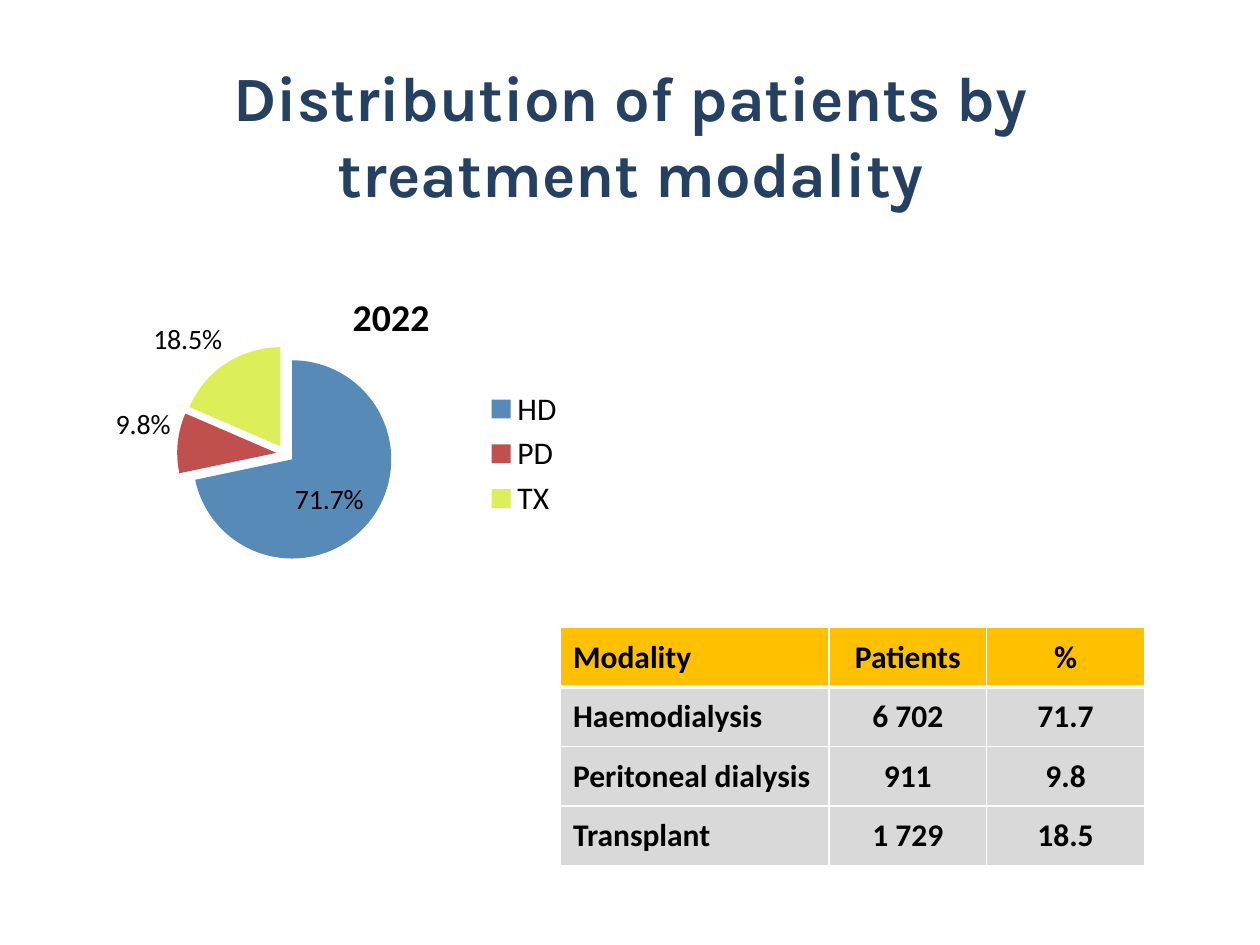
import pptx
import pptx.chart.data
import pptx.dml.color
import pptx.enum.chart
import pptx.enum.text
import pptx.oxml
import pptx.oxml.ns
import pptx.util
from pptx.util import Cm, Pt

COLOURS = {
    "heading": "254061",
    "text": "000000",
    "header": "FFC000",
    "body": "D9D9D9",
    "border": "FFFFFF",
    "HD": "578AB7",
    "PD": "C0504D",
    "TX": "DCEF59",
}
FORMATS = {
    "heading": {"name": "Karla", "size": Pt(36), "bold": True},
    "chart": {"name": "Calibri", "size": Pt(18), "bold": False},
    "chart title": {"name": "Calibri", "size": Pt(21.6), "bold": True},
    "label": {"name": "Calibri", "size": Pt(16), "bold": False},
    "cell": {"name": "Calibri", "size": Pt(18), "bold": True},
}
SHARES = {"HD": 71.7, "PD": 9.8, "TX": 18.5}
MODALITIES = [
    ("Modality", "Patients", "%"),
    ("Haemodialysis", "6 702", "71.7"),
    ("Peritoneal dialysis", "911", "9.8"),
    ("Transplant", "1 729", "18.5"),
]
COLUMN_WIDTHS = (5.41, 3.18, 3.18)
ROW_HEIGHT = 1.2
ALIGN = pptx.enum.text.PP_ALIGN
LABEL_AT = pptx.enum.chart.XL_LABEL_POSITION


def rgb(key):
    return pptx.dml.color.RGBColor.from_string(COLOURS[key])


def set_values(target, values):
    for name, value in values.items():
        setattr(target, name, value)


def style_font(font, kind, colour="text"):
    set_values(font, FORMATS[kind])
    font.color.rgb = rgb(colour)


def fill_solid(fill, colour):
    fill.solid()
    fill.fore_color.rgb = rgb(colour)


def write(frame, text, kind, colour="text", align=ALIGN.CENTER):
    paragraph = frame.paragraphs[0]
    paragraph.alignment = align
    words = paragraph.add_run()
    words.text = text
    style_font(words.font, kind, colour)


def add_heading(slide, text):
    heading = slide.shapes.add_textbox(Cm(2.69), Cm(1.12), Cm(20.04), Cm(3.18))
    set_values(heading.text_frame, {
        "word_wrap": True,
        "vertical_anchor": pptx.enum.text.MSO_ANCHOR.MIDDLE,
    })
    write(heading.text_frame, text, "heading", "heading")


def place(element, inner=False, **fractions):
    target = '<c:layoutTarget val="inner"/>' if inner else ""
    modes = "".join(f'<c:{k}Mode val="edge"/>' for k in "xy")
    values = "".join(f'<c:{k} val="{v}"/>' for k, v in fractions.items())
    layout = pptx.oxml.parse_xml(
        f'<c:layout {pptx.oxml.ns.nsdecls("c")}><c:manualLayout>'
        f'{target}{modes}{values}</c:manualLayout></c:layout>')
    for old in element.findall(pptx.oxml.ns.qn("c:layout")):
        element.remove(old)
    before = [element.find(pptx.oxml.ns.qn(f"c:{tag}")) for tag in ("tx", "legendPos")]
    position = max((element.index(e) + 1 for e in before if e is not None), default=0)
    element.insert(position, layout)


def add_share_pie(slide):
    shares = pptx.chart.data.CategoryChartData(number_format='0.0"%"')
    shares.categories = list(SHARES)
    shares.add_series("Series 1", list(SHARES.values()))
    chart = slide.shapes.add_chart(
        pptx.enum.chart.XL_CHART_TYPE.PIE,
        Cm(0.51), Cm(4.29), Cm(12.19), Cm(8.38), shares).chart
    style_font(chart.font, "chart")

    chart.has_title = True
    write(chart.chart_title.text_frame, "2022", "chart title")
    place(chart.chart_title._element, x=0.53, y=0.17)

    chart.has_legend = True
    set_values(chart.legend, {
        "position": pptx.enum.chart.XL_LEGEND_POSITION.RIGHT,
        "include_in_layout": False,
    })
    style_font(chart.legend.font, "chart")
    place(chart.legend._element, x=0.74, y=0.41, w=0.17, h=0.34)

    pie = chart.plots[0]
    pie.vary_by_categories = True
    place(chart._chartSpace.chart.plotArea, inner=True, x=0.25, y=0.32, w=0.36, h=0.52)
    series = pie.series[0]
    for index, modality in enumerate(SHARES):
        fill_solid(series.points[index].format.fill, modality)
    explosion = pptx.oxml.parse_xml(
        f'<c:explosion {pptx.oxml.ns.nsdecls("c")} val="9"/>')
    series._element.find(pptx.oxml.ns.qn("c:dPt")).addprevious(explosion)

    set_values(series.data_labels, {
        "show_value": True,
        "number_format": '0.0"%"',
        "number_format_is_linked": False,
        "position": LABEL_AT.OUTSIDE_END,
    })
    style_font(series.data_labels.font, "label")
    largest = series.points[0].data_label
    style_font(largest.font, "label")
    largest.position = LABEL_AT.INSIDE_END


def draw_borders(cell, widths):
    properties = cell._tc.get_or_add_tcPr()
    for side, width in widths.items():
        properties.append(pptx.oxml.parse_xml(
            f'<a:ln{side} {pptx.oxml.ns.nsdecls("a")} w="{Pt(width)}"><a:solidFill>'
            f'<a:srgbClr val="{COLOURS["border"]}"/></a:solidFill></a:ln{side}>'))


def add_modality_table(slide):
    modalities = slide.shapes.add_table(
        len(MODALITIES), len(COLUMN_WIDTHS), Cm(11.3), Cm(12.65),
        Cm(sum(COLUMN_WIDTHS)), Cm(ROW_HEIGHT * len(MODALITIES))).table
    set_values(modalities, {"first_row": False, "horz_banding": False})
    for column, width in zip(modalities.columns, COLUMN_WIDTHS):
        column.width = Cm(width)
    for r, entries in enumerate(MODALITIES):
        modalities.rows[r].height = Cm(ROW_HEIGHT)
        for c, entry in enumerate(entries):
            cell = modalities.cell(r, c)
            cell.vertical_anchor = pptx.enum.text.MSO_ANCHOR.MIDDLE
            draw_borders(cell, {"L": 1, "R": 1, "T": 3 if r == 1 else 1,
                                "B": 3 if r == 0 else 1})
            fill_solid(cell.fill, "header" if r == 0 else "body")
            write(cell.text_frame, entry, "cell",
                  align=ALIGN.LEFT if c == 0 else ALIGN.CENTER)


def main():
    presentation = pptx.Presentation()
    set_values(presentation, {"slide_width": Cm(25.4), "slide_height": Cm(19.05)})
    slide = presentation.slides.add_slide(presentation.slide_layouts[6])
    add_heading(slide, "Distribution of patients by treatment modality")
    add_modality_table(slide)
    add_share_pie(slide)
    presentation.save("out.pptx")


if __name__ == "__main__":
    main()
